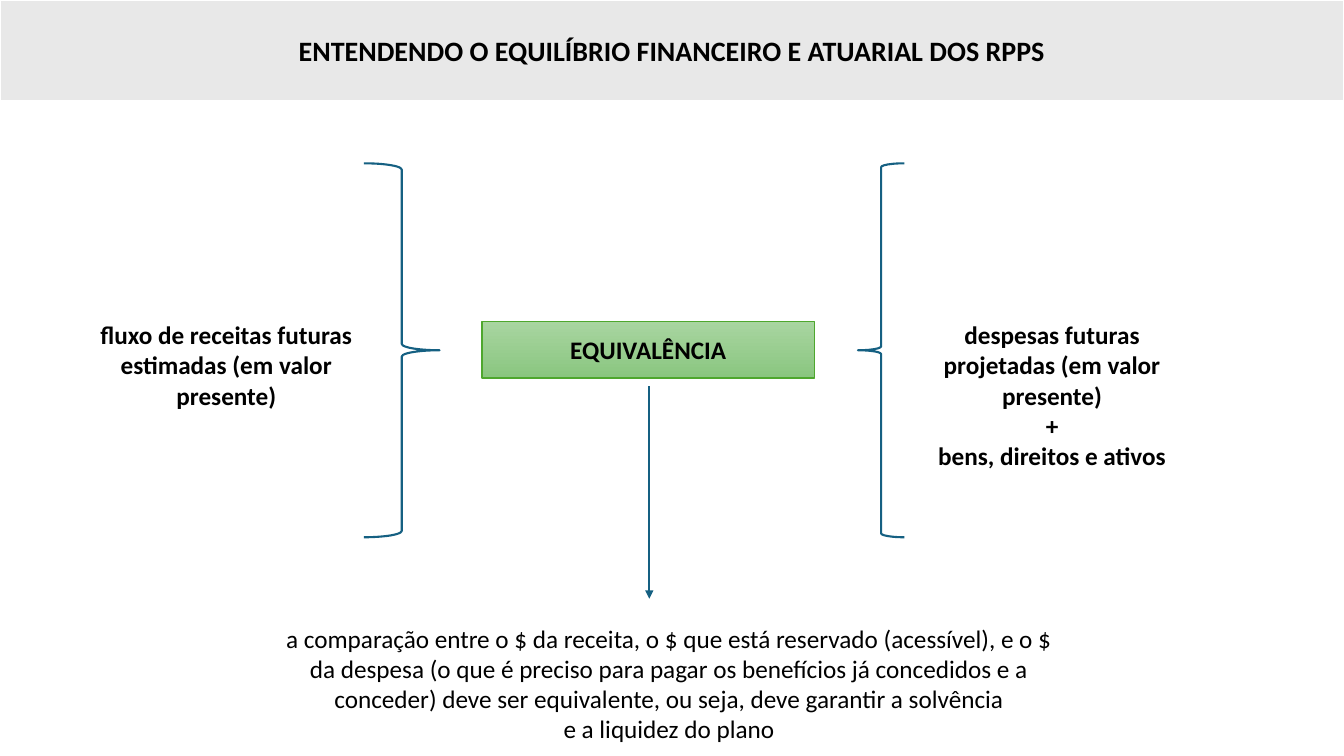
"""Build the slide on financial and actuarial balance."""
from dataclasses import dataclass

from lxml import etree
from pptx import Presentation
from pptx.dml.color import RGBColor
from pptx.enum import shapes, text
from pptx.oxml import ns
from pptx.util import Inches, Pt


@dataclass(frozen=True)
class Theme:
    """Hold the colours, font and sizes of the slide."""
    font: str = "Calibri"
    ink: str = "000000"
    band: str = "E8E8E8"
    edge: str = "FFFFFF"
    blue: str = "156082"
    green: str = "4EA72E"
    light: str = "A8D5A0"
    dark: str = "8AC680"
    head: int = 20
    body: int = 18
    thick: float = 1.5
    thin: float = 1


THEME = Theme()


def color(code):
    """Turn a hex code into a colour."""
    return RGBColor.from_string(code)


def write(frame, lines, size=THEME.body, bold=True, middle=False):
    """Write centred paragraphs into a text frame."""
    frame.word_wrap = True
    frame.auto_size = text.MSO_AUTO_SIZE.NONE
    anchor = text.MSO_ANCHOR
    frame.vertical_anchor = anchor.MIDDLE if middle else anchor.TOP
    for i, line in enumerate(lines):
        para = frame.add_paragraph() if i else frame.paragraphs[0]
        para.alignment = text.PP_ALIGN.CENTER
        run = para.add_run()
        run.text = line
        run.font.name = THEME.font
        run.font.size = Pt(size)
        run.font.bold = bold
        run.font.color.rgb = color(THEME.ink)


def stroke(shape, code, width=THEME.thick):
    """Set the line of a shape."""
    shape.line.color.rgb = color(code)
    shape.line.width = Pt(width)


def add_title(slide, wide, words):
    """Format the title as a band across the top."""
    title = slide.shapes.title
    title.left, title.top = Inches(0), Inches(0)
    title.width, title.height = wide, Inches(1)
    title.fill.solid()
    title.fill.fore_color.rgb = color(THEME.band)
    stroke(title, THEME.edge)
    write(title.text_frame, [words], THEME.head, middle=True)


def add_form(slide, kind, box):
    """Add a preset shape without shadow."""
    form = slide.shapes.add_shape(kind, *map(Inches, box))
    form.shadow.inherit = False
    return form


def add_label(slide, box, words):
    """Add the green box with its label."""
    label = add_form(slide, shapes.MSO_SHAPE.RECTANGLE, box)
    label.fill.gradient()
    label.fill.gradient_angle = 270
    for stop, (place, code) in zip(label.fill.gradient_stops,
                                   ((0, THEME.light), (1, THEME.dark))):
        stop.position = place
        stop.color.rgb = color(code)
    stroke(label, THEME.green, THEME.thin)
    write(label.text_frame, [words], middle=True)


def add_brace(slide, kind, left, wide):
    """Add one of the two tall braces."""
    brace = add_form(slide, kind, (left, 1.62, wide, 3.71))
    brace.fill.background()
    stroke(brace, THEME.blue)


def add_text(slide, box, lines, bold=True):
    """Add a text box."""
    area = slide.shapes.add_textbox(*map(Inches, box))
    write(area.text_frame, lines, bold=bold)


def add_arrow(slide, x, top, end):
    """Add an arrow that points down."""
    arrow = slide.shapes.add_connector(
        shapes.MSO_CONNECTOR.STRAIGHT, *map(Inches, (x, top, x, end)))
    stroke(arrow, THEME.blue)
    tip = etree.SubElement(arrow.line._get_or_add_ln(), ns.qn("a:tailEnd"))
    tip.set("type", "triangle")
    etree.SubElement(arrow._element.spPr, ns.qn("a:effectLst"))


def main():
    """Build and save the slide."""
    deck = Presentation()
    deck.slide_width, deck.slide_height = Inches(13.33), Inches(7.5)
    slide = deck.slides.add_slide(deck.slide_layouts[5])
    add_title(slide, deck.slide_width,
              "ENTENDENDO O EQUILÍBRIO FINANCEIRO E ATUARIAL DOS RPPS")
    add_label(slide, (4.78, 3.19, 3.3, 0.56), "EQUIVALÊNCIA")
    add_brace(slide, shapes.MSO_SHAPE.RIGHT_BRACE, 3.61, 0.75)
    add_brace(slide, shapes.MSO_SHAPE.LEFT_BRACE, 8.51, 0.46)
    add_text(slide, (0.88, 3.12, 2.73, 1.01),
             ["fluxo de receitas futuras estimadas (em valor presente)"])
    add_text(slide, (9.07, 3.12, 2.73, 1.62),
             ["despesas futuras projetadas (em valor presente)",
              "+", "bens, direitos e ativos"])
    add_arrow(slide, 6.44, 3.83, 5.94)
    add_text(slide, (2.65, 6.13, 7.97, 1.31),
             ["a comparação entre o $ da receita, o $ que está reservado "
              "(acessível), e o $ da despesa (o que é preciso para pagar os "
              "benefícios já concedidos e a conceder) deve ser equivalente, "
              "ou seja, deve garantir a solvência",
              "e a liquidez do plano"], bold=False)
    deck.save("out.pptx")


if __name__ == "__main__":
    main()
